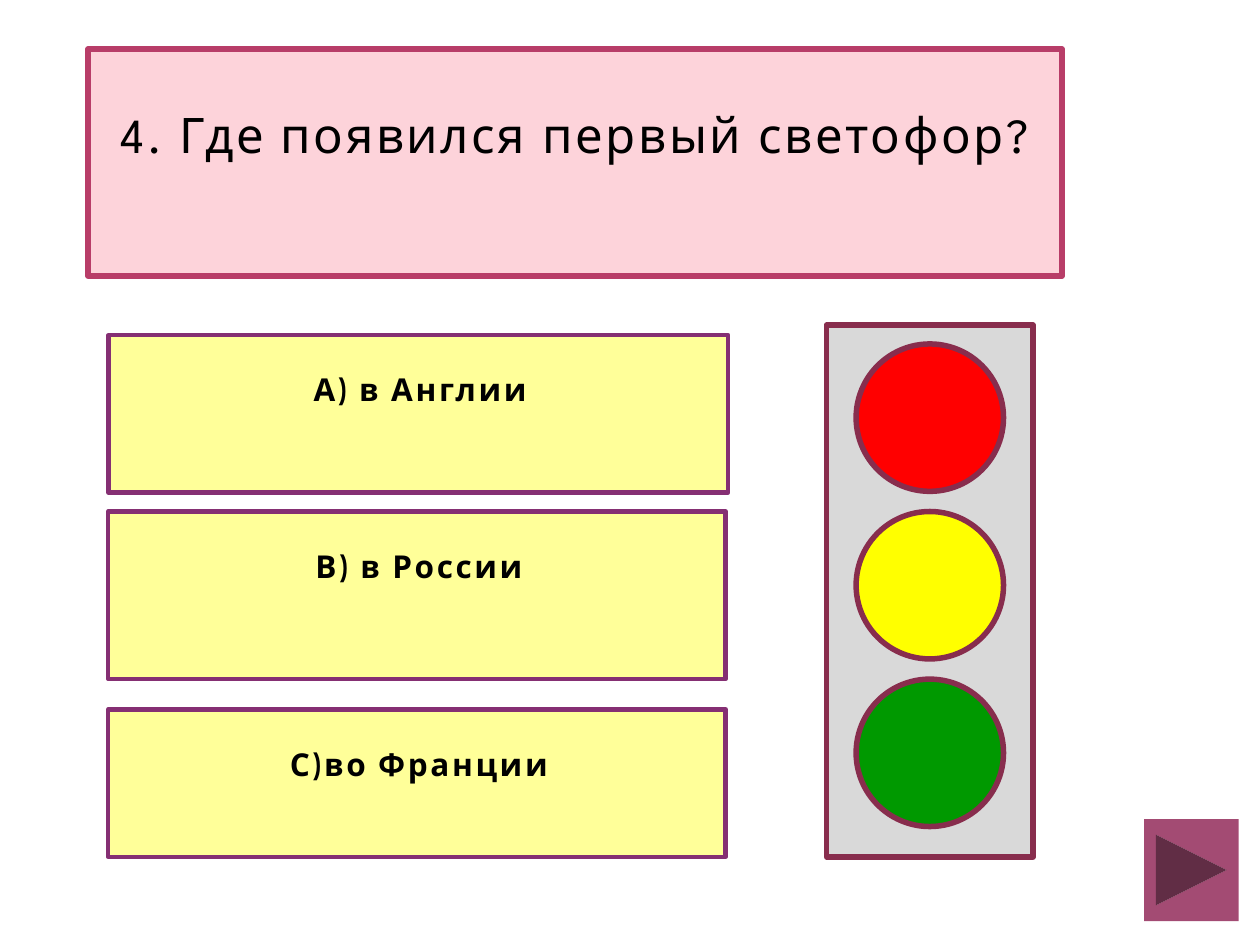
from pptx import Presentation
from pptx.dml.color import RGBColor
from pptx.enum import shapes, text
from pptx.util import Inches, Pt

SHAPE = shapes.MSO_SHAPE


def rgb(value):
    return RGBColor.from_string(value)


class QuizSlide:
    ink = "000000"
    lamp_line = "882D4D"
    answer_fill = "FFFF99"
    answer_line = "852F73"

    def __init__(self, prs):
        self.s = prs.slides.add_slide(prs.slide_layouts[6])

    def shape(self, kind, box, fill, line=None, width=3.15):
        sp = self.s.shapes.add_shape(kind, *(Inches(v) for v in box))
        sp.shadow.inherit = False
        sp.fill.solid()
        sp.fill.fore_color.rgb = rgb(fill)
        if line:
            sp.line.color.rgb = rgb(line)
            sp.line.width = Pt(width)
        else:
            sp.line.fill.background()
        return sp

    def label(self, sp, words, font, size, insets, bold=False):
        tf = sp.text_frame
        tf.word_wrap = True
        tf.vertical_anchor = text.MSO_ANCHOR.TOP
        tf.margin_left, tf.margin_top, tf.margin_right, tf.margin_bottom = (
            Inches(v) for v in insets)
        p = tf.paragraphs[0]
        p.alignment = text.PP_ALIGN.CENTER
        r = p.add_run()
        r.text = words
        r.font.name = font
        r.font.size = Pt(size)
        r.font.bold = bold
        r.font.color.rgb = rgb(self.ink)
        r._r.get_or_add_rPr().set("spc", "150")

    def question(self, words, box):
        sp = self.shape(SHAPE.RECTANGLE, box, "FDD3DA", "B83D68")
        self.label(sp, words, "League Spartan", 28, (0.05, 0.44, 0.05, 0))

    def answer(self, words, box):
        sp = self.shape(SHAPE.RECTANGLE, box, self.answer_fill, self.answer_line, 2.5)
        self.label(sp, words, "Cabin", 18, (0.13, 0.28, 0.1, 0.05), True)

    def traffic_light(self, box, colours):
        self.shape(SHAPE.RECTANGLE, box, "D9D9D9", self.lamp_line)
        left, top, width, _ = box
        size, pitch = 1.17, 1.33
        for i, colour in enumerate(colours):
            lamp = (left + (width - size) / 2, top + 0.15 + i * pitch, size, size)
            self.shape(SHAPE.OVAL, lamp, colour, self.lamp_line)

    def next_button(self, box):
        self.shape(SHAPE.ACTION_BUTTON_FORWARD_OR_NEXT, box, "A34B73")


def main():
    prs = Presentation()
    prs.slide_width, prs.slide_height = Inches(10), Inches(7.5)
    quiz = QuizSlide(prs)
    quiz.question("4. Где появился первый светофор?", (0.7, 0.39, 7.73, 1.8))
    answers = [
        ("А) в Англии", 2.66, 4.92, 1.25),
        ("В) в России", 4.06, 4.9, 1.33),
        ("С)во Франции", 5.63, 4.9, 1.17),
    ]
    for words, top, width, height in answers:
        quiz.answer(words, (0.86, top, width, height))
    quiz.traffic_light((6.56, 2.58, 1.64, 4.22), ["FF0000", "FFFF00", "009900"])
    quiz.next_button((9.08, 6.5, 0.75, 0.81))
    prs.save("out.pptx")


if __name__ == "__main__":
    main()
